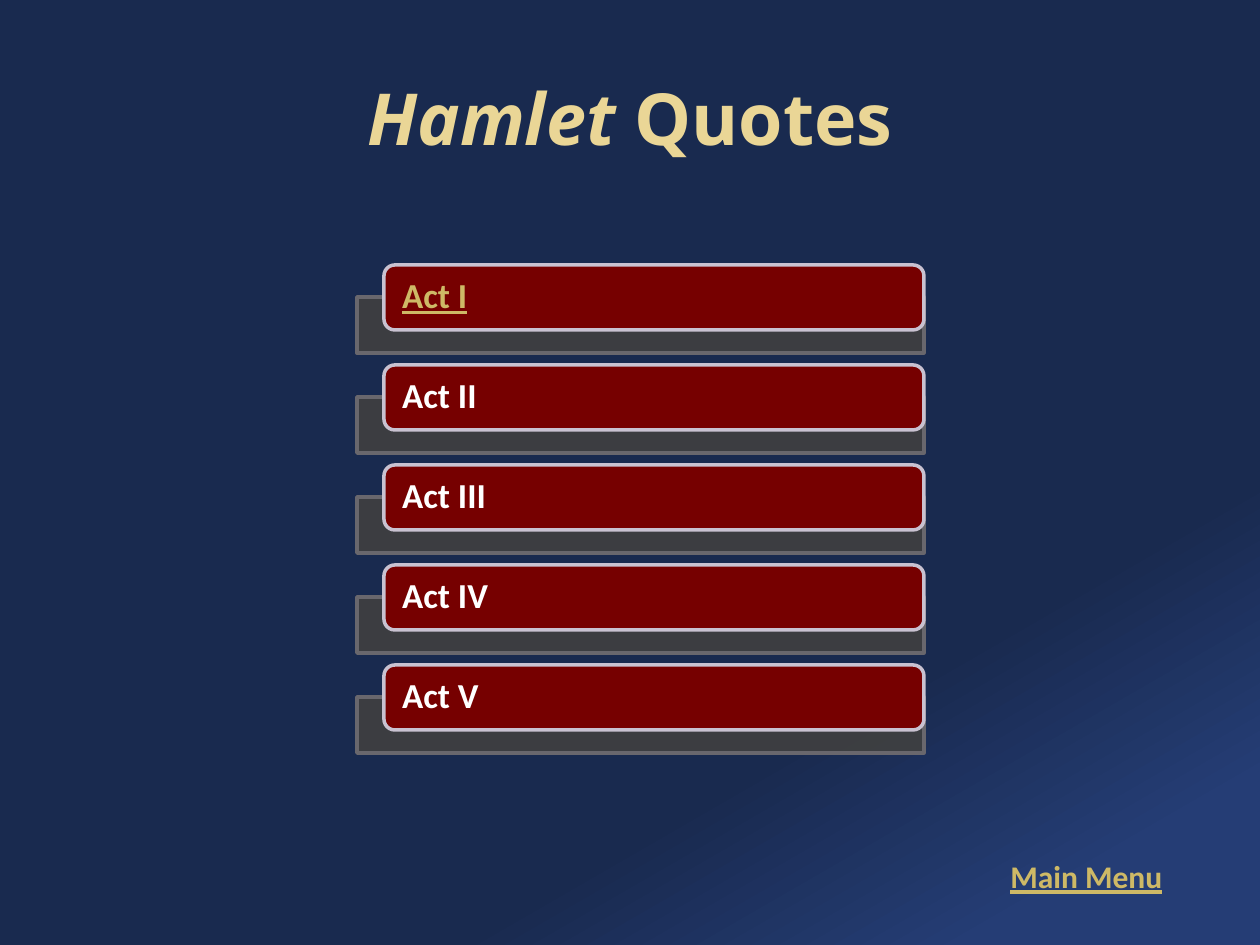
from lxml.etree import SubElement
from pptx import Presentation
from pptx.dml.color import RGBColor
from pptx.enum.shapes import MSO_SHAPE
from pptx.enum.text import MSO_ANCHOR, PP_ALIGN
from pptx.oxml.ns import qn
from pptx.util import Pt

EMU_PER_PX = 914400 / 126
NAVY = RGBColor(0x19, 0x2A, 0x4F)
BLUE = RGBColor(0x25, 0x3D, 0x75)
CREAM = RGBColor(0xEA, 0xD6, 0x96)
GOLD = RGBColor(0xCE, 0xB9, 0x66)
WHITE = RGBColor(0xFF, 0xFF, 0xFF)
MAROON = RGBColor(0x76, 0x00, 0x00)
LILAC = RGBColor(0xC9, 0xC2, 0xD1)
CHARCOAL = RGBColor(0x40, 0x40, 0x40)
GREY = RGBColor(0x69, 0x67, 0x6D)

ACTS = ["Act I", "Act II", "Act III", "Act IV", "Act V"]
FIRST_TOP = 265
ROW_PITCH = 100


def px(length):
    return round(length * EMU_PER_PX)


def box(*lengths):
    return [px(length) for length in lengths]


def paint_background(slide):
    fill = slide.background.fill
    fill.gradient()
    fill.gradient_angle = 300
    for stop, position, color in zip(fill.gradient_stops, (0.72, 0.9), (NAVY, BLUE)):
        stop.position = position
        stop.color.rgb = color


def style(paragraph, size, color, face="Calibri", underline=None):
    font = paragraph.font
    font.name = face
    font.size = Pt(size)
    font.bold = True
    font.underline = underline
    font.color.rgb = color


def add_panel(slide, preset, bounds, fill_color, line_color):
    panel = slide.shapes.add_shape(preset, *box(*bounds))
    panel.shadow.inherit = False
    panel.fill.solid()
    panel.fill.fore_color.rgb = fill_color
    panel.line.color.rgb = line_color
    panel.line.width = Pt(2)
    return panel


def set_opacity(panel, percent):
    color = panel.fill._xPr.find(qn("a:solidFill"))[0]
    SubElement(color, qn("a:alpha"), val=str(percent * 1000))


def add_title(slide):
    frame = slide.shapes.add_textbox(*box(63, 38, 1134, 157)).text_frame
    frame.word_wrap = True
    frame.vertical_anchor = MSO_ANCHOR.MIDDLE
    heading = frame.paragraphs[0]
    heading.alignment = PP_ALIGN.CENTER
    style(heading, 41, CREAM, face="Open Sans")
    play = heading.add_run()
    play.text = "Hamlet "
    play.font.italic = True
    heading.add_run().text = "Quotes"


def add_act(slide, name, top, is_link):
    bar = add_panel(slide, MSO_SHAPE.RECTANGLE, (357, top + 32, 567, 56), CHARCOAL, GREY)
    set_opacity(bar, 90)
    button = add_panel(slide, MSO_SHAPE.ROUNDED_RECTANGLE, (384, top, 540, 65), MAROON, LILAC)
    frame = button.text_frame
    frame.margin_left = frame.margin_right = px(15)
    frame.margin_top = frame.margin_bottom = 0
    frame.vertical_anchor = MSO_ANCHOR.MIDDLE
    label = frame.paragraphs[0]
    label.text = name
    label.alignment = PP_ALIGN.LEFT
    label.line_spacing = 0.9
    style(label, 20, GOLD if is_link else WHITE, underline=is_link)


def add_menu_link(slide):
    frame = slide.shapes.add_textbox(*box(998, 851, 178, 50)).text_frame
    frame.word_wrap = False
    label = frame.paragraphs[0]
    label.text = "Main Menu"
    style(label, 18, GOLD, underline=True)


def main():
    deck = Presentation()
    deck.slide_width, deck.slide_height = box(1260, 945)
    slide = deck.slides.add_slide(deck.slide_layouts[6])
    paint_background(slide)
    add_title(slide)
    add_menu_link(slide)
    for row, name in enumerate(ACTS):
        add_act(slide, name, FIRST_TOP + row * ROW_PITCH, is_link=row == 0)
    deck.save("out.pptx")


if __name__ == "__main__":
    main()
